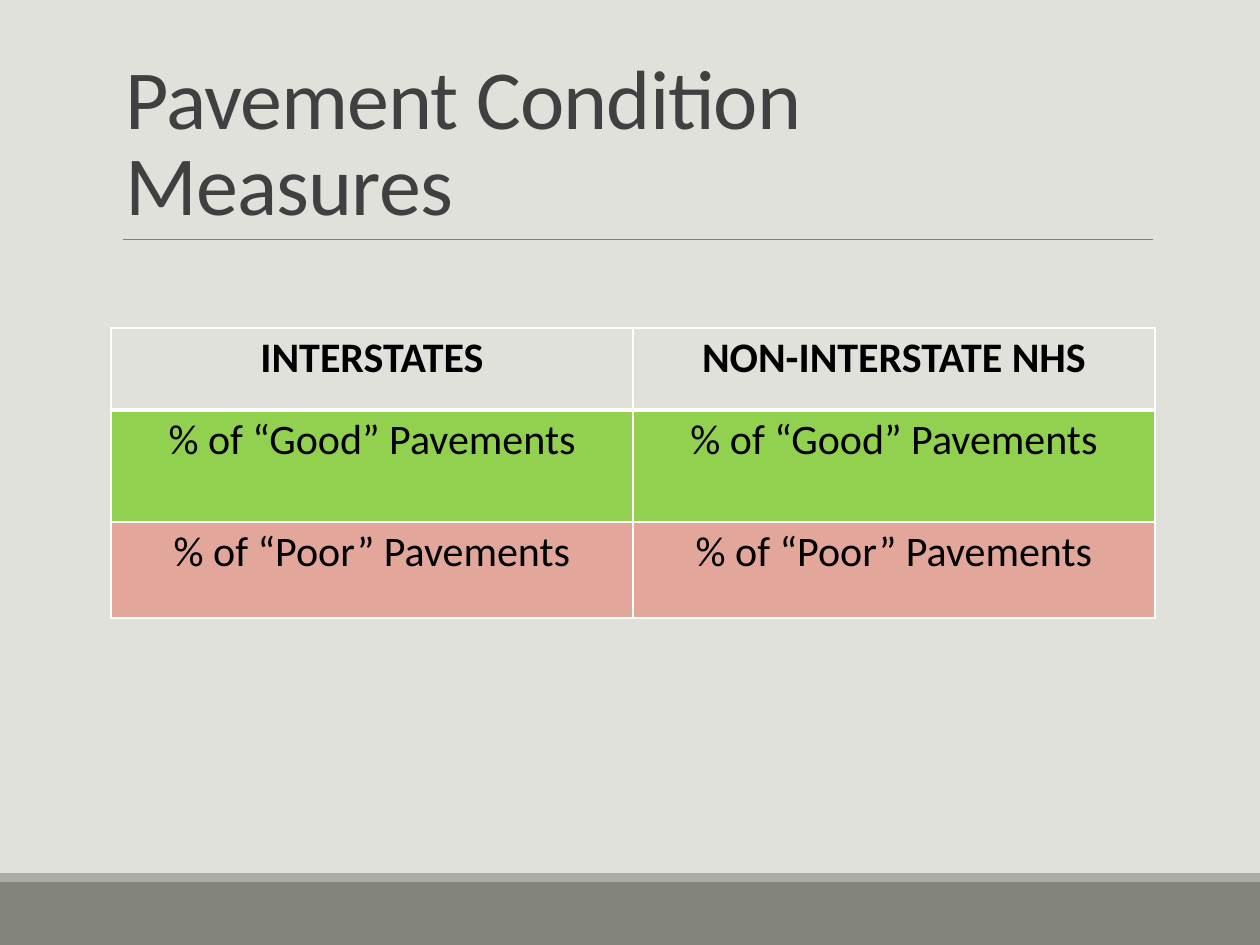
from dataclasses import dataclass

from lxml import etree
from pptx import Presentation
from pptx.dml.color import RGBColor
from pptx.enum.shapes import MSO_CONNECTOR, MSO_SHAPE
from pptx.enum.text import MSO_ANCHOR, MSO_AUTO_SIZE, PP_ALIGN
from pptx.oxml.ns import qn
from pptx.util import Pt

LINE = MSO_CONNECTOR.STRAIGHT
RECT = MSO_SHAPE.RECTANGLE
BOTTOM = MSO_ANCHOR.BOTTOM
FIXED = MSO_AUTO_SIZE.NONE
LEFT, CENTER = PP_ALIGN.LEFT, PP_ALIGN.CENTER
TITLE_ONLY = 5
EMU_PER_PX = 914400 / 126


@dataclass(frozen=True)
class Theme:
    font: str = "Calibri"
    back: str = "E1E1DB"
    band: str = "82847C"
    strip: str = "ACADA8"
    rule: str = "808080"
    title: str = "404040"
    text: str = "000000"
    edge: str = "FFFFFF"
    good: str = "92D050"
    poor: str = "E2A69A"
    title_size: int = 48
    cell_size: int = 24


THEME = Theme()
ROWS = [
    # texts, fill, height in px
    (("INTERSTATES", "NON-INTERSTATE NHS"), None, 82),
    (("% of “Good” Pavements",) * 2, THEME.good, 112),
    (("% of “Poor” Pavements",) * 2, THEME.poor, 96),
]


def px(num):
    return round(num * EMU_PER_PX)


def rgb(code):
    return RGBColor.from_string(code)


def add_run(para, text, size, color, bold=False):
    run = para.add_run()
    run.text = text
    font = run.font
    font.name, font.size, font.bold = THEME.font, Pt(size), bold
    font.color.rgb = rgb(color)
    return run


def add_bar(slide, x, y, w, h, color):
    bar = slide.shapes.add_shape(RECT, px(x), px(y), px(w), px(h))
    bar.shadow.inherit = False
    bar.fill.solid()
    bar.fill.fore_color.rgb = rgb(color)
    bar.line.fill.background()


def add_footer(slide, x, y, w, h):
    """Draw a dark band with a thin lighter strip along its top."""
    strip = 9
    add_bar(slide, x, y + strip, w, h - strip, THEME.band)
    add_bar(slide, x, y, w, strip, THEME.strip)


def add_title(slide, x, y, w, h, text):
    """Fill the title placeholder and rule a line under it."""
    base = px(y + h)
    rule = slide.shapes.add_connector(LINE, px(x + 10), base, px(x + w), base)
    rule.line.color.rgb = rgb(THEME.rule)
    rule.line.width = Pt(0.5)
    etree.SubElement(rule._element.spPr, qn("a:effectLst"))

    title = slide.shapes.title
    title.left, title.top, title.width, title.height = map(px, (x, y, w, h))
    frame = title.text_frame
    frame.word_wrap, frame.auto_size = True, FIXED
    frame.vertical_anchor = BOTTOM
    para = frame.paragraphs[0]
    para.alignment, para.line_spacing = LEFT, 0.85
    run = add_run(para, text, THEME.title_size, THEME.title)
    run.font._element.set("spc", "-50")


def set_edges(cell, widths):
    """Set cell borders; widths maps the sides L, R, T, B to points."""
    props = cell._tc.get_or_add_tcPr()
    for side, width in widths.items():
        line = etree.SubElement(props, qn(f"a:ln{side}"), w=str(Pt(width)))
        fill = etree.SubElement(line, qn("a:solidFill"))
        etree.SubElement(fill, qn("a:srgbClr"), val=THEME.edge)


def fill_cell(cell, text, color, head, under):
    cell.margin_left = cell.margin_right = px(9)
    cell.margin_top = cell.margin_bottom = px(5)
    set_edges(cell, {"L": 1, "R": 1, "T": 3 if under else 1, "B": 3 if head else 1})
    if color:
        cell.fill.solid()
        cell.fill.fore_color.rgb = rgb(color)
    else:
        cell.fill.background()
    para = cell.text_frame.paragraphs[0]
    para.alignment = CENTER
    add_run(para, text, THEME.cell_size, THEME.text, head)


def add_grid(slide, x, y, w, rows):
    cols = len(rows[0][0])
    high = sum(row[2] for row in rows)
    box = map(px, (x, y, w, high))
    table = slide.shapes.add_table(len(rows), cols, *box).table
    for col in table.columns:
        col.width = px(w / cols)
    for i, (texts, color, tall) in enumerate(rows):
        table.rows[i].height = px(tall)
        for j, text in enumerate(texts):
            fill_cell(table.cell(i, j), text, color, i == 0, i == 1)


def main():
    deck = Presentation()
    deck.slide_width, deck.slide_height = px(1260), px(945)
    slide = deck.slides.add_slide(deck.slide_layouts[TITLE_ONLY])
    back = slide.background.fill
    back.solid()
    back.fore_color.rgb = rgb(THEME.back)
    add_footer(slide, 0, 873, 1260, 72)
    add_title(slide, 113, 39, 1040, 200, "Pavement Condition Measures")
    add_grid(slide, 111, 328, 1044, ROWS)
    deck.save("out.pptx")


if __name__ == "__main__":
    main()
